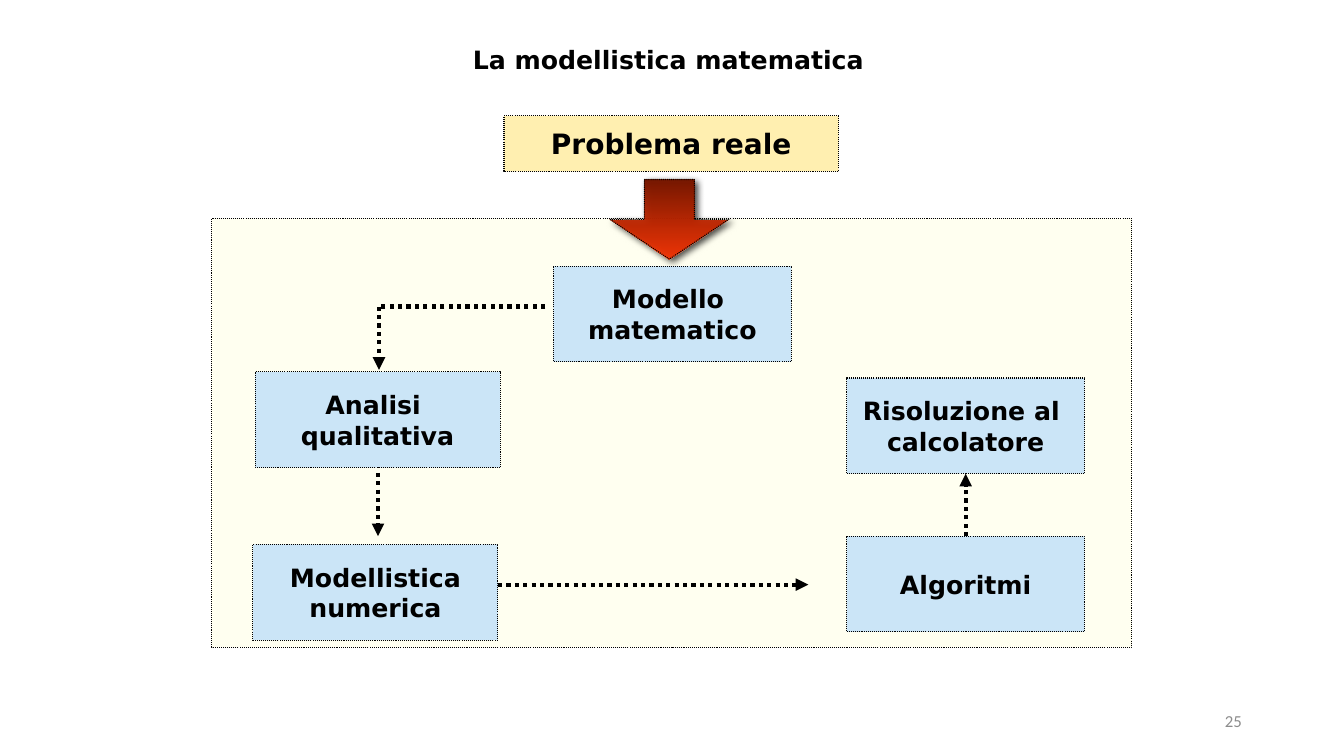
from lxml import etree
from pptx import Presentation
from pptx.dml.color import RGBColor
from pptx.enum import dml, shapes, text
from pptx.oxml import ns
from pptx.util import Pt

COLORS = {
    "ink": "000000", "number": "8C8C8C", "frame": "FFFFCC", "problem": "FFCC00",
    "step": "99CCFF", "arrow_top": "761800", "arrow_tip": "FF3300",
}
HEADING = "DejaVu Sans"
TITLE = ("La modellistica matematica", (330.5, 28.1, 294.5, 28.8))
PAGE_NUMBER = ("25", (678.2, 500.4, 216, 28.8))
FRAME = (151.2, 156.2, 657.4, 306)
PROBLEM = ("Problema reale", (360, 82.8, 239, 39.6))
BIG_ARROW = (435.6, 128.2, 85, 56.9)

STEP_HEIGHT = 68.4
STEPS = {  # lines of text, left, top, width
    "model": (["Modello ", "matematico"], 395.3, 190.1, 170),
    "analysis": (["Analisi ", "qualitativa"], 182.2, 265.7, 175),
    "numerics": (["Modellistica", "numerica"], 180.7, 388.8, 175),
    "algorithms": (["Algoritmi"], 604.8, 383, 170),
    "solution": (["Risoluzione al ", "calcolatore"], 604.8, 270, 170),
}
LINKS = [  # start, end, arrowhead
    ((389.5, 219), (270.7, 219), False),
    ((270.7, 219), (270.7, 264.2), True),
    ((270, 337.7), (270, 383), True),
    ((355.7, 417.6), (577.4, 417.6), True),
]


def rgb(name):
    return RGBColor.from_string(COLORS[name])


def add_xml(parent, tag, **attributes):
    return etree.SubElement(parent, ns.qn(tag),
                            {key: str(value) for key, value in attributes.items()})


def set_alpha(shape, percent):
    """Make the last colour of the shape's fill partly transparent."""
    fill = shape._element.spPr.xpath("./a:solidFill | ./a:gradFill")[0]
    color = list(fill.iter(ns.qn("a:srgbClr")))[-1]
    add_xml(color, "a:alpha", val=percent * 1000)


def dot_line(line, width):
    line.color.rgb = rgb("ink")
    line.width = Pt(width)
    line.dash_style = dml.MSO_LINE.ROUND_DOT


def write(frame, lines, size, font=HEADING, color="ink", bold=True,
          align=text.PP_ALIGN.CENTER, anchor=text.MSO_ANCHOR.MIDDLE, wrap=False):
    frame.word_wrap = wrap
    frame.vertical_anchor = anchor
    frame.text = "\n".join(lines)
    for para in frame.paragraphs:
        para.alignment = align
        para.font.name = font
        para.font.size = Pt(size)
        para.font.bold = bold
        para.font.color.rgb = rgb(color)


def add_outlined(kind, area):
    shape = page.shapes.add_shape(kind, *map(Pt, area))
    shape.shadow.inherit = False
    dot_line(shape.line, 0.75)
    return shape


def add_box(area, color, alpha, lines=(), size=18):
    box = add_outlined(shapes.MSO_SHAPE.RECTANGLE, area)
    box.fill.solid()
    box.fill.fore_color.rgb = rgb(color)
    set_alpha(box, alpha)
    if lines:
        write(box.text_frame, lines, size)
    return box


def add_big_arrow(area):
    arrow = add_outlined(shapes.MSO_SHAPE.DOWN_ARROW, area)
    arrow.adjustments[0] = 0.42
    arrow.adjustments[1] = 0.5
    arrow.fill.gradient()
    arrow.fill.gradient_angle = 270
    for stop, name in zip(arrow.fill.gradient_stops, ("arrow_top", "arrow_tip")):
        stop.color.rgb = rgb(name)
    set_alpha(arrow, 91)
    effects = arrow._element.spPr.find(ns.qn("a:effectLst"))
    shadow = add_xml(effects, "a:outerShdw", blurRad=Pt(5), dist=Pt(3),
                     dir=45 * 60000, algn="tl", rotWithShape=0)
    add_xml(add_xml(shadow, "a:srgbClr", val=COLORS["ink"]), "a:alpha", val=75000)


def add_link(start, end, has_head=True):
    link = page.shapes.add_connector(shapes.MSO_CONNECTOR.STRAIGHT,
                                     *map(Pt, start + end))
    dot_line(link.line, 3)
    if has_head:
        add_xml(link.line._get_or_add_ln(), "a:tailEnd", type="triangle")
    add_xml(link._element.spPr, "a:effectLst")
    return link


deck = Presentation()
deck.slide_width, deck.slide_height = Pt(960), Pt(540)
page = deck.slides.add_slide(deck.slide_layouts[5])

title = page.shapes.title
title.left, title.top, title.width, title.height = map(Pt, TITLE[1])
write(title.text_frame, [TITLE[0]], 18, align=text.PP_ALIGN.LEFT,
      anchor=text.MSO_ANCHOR.TOP)
title.text_frame.auto_size = text.MSO_AUTO_SIZE.SHAPE_TO_FIT_TEXT

add_box(FRAME, "frame", 29)
add_box(PROBLEM[1], "problem", 31, [PROBLEM[0]], 20)
add_big_arrow(BIG_ARROW)

boxes = {}
for name, (lines, left, top, width) in STEPS.items():
    boxes[name] = add_box((left, top, width, STEP_HEIGHT), "step", 51, lines)

for start, end, has_head in LINKS:
    add_link(start, end, has_head)
upward = add_link((689.8, 383), (689.8, 338.4))
upward.begin_connect(boxes["algorithms"], 0)
upward.end_connect(boxes["solution"], 2)

number = page.shapes.add_textbox(*map(Pt, PAGE_NUMBER[1]))
write(number.text_frame, [PAGE_NUMBER[0]], 12, "Calibri", "number", False,
      text.PP_ALIGN.RIGHT, wrap=True)

deck.save("out.pptx")
